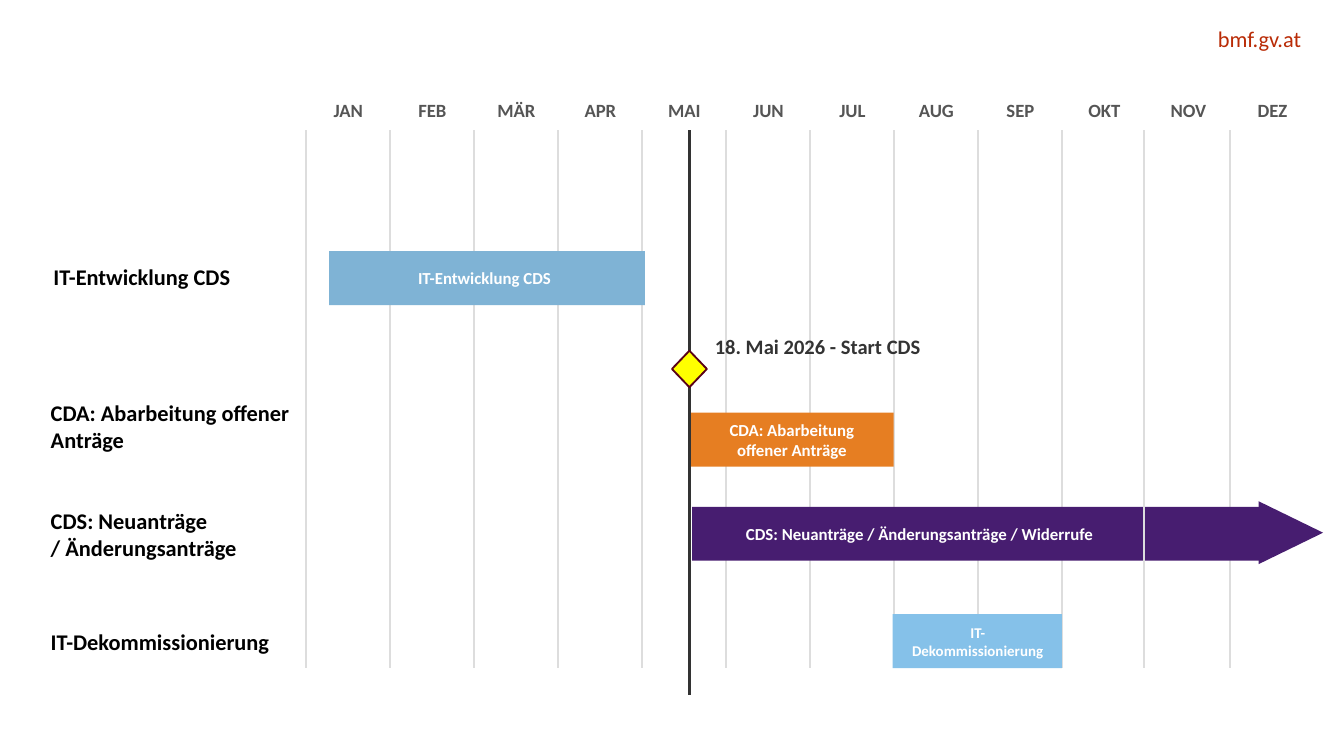
"""Build the 2026 timeline slide for the CDS start."""
from lxml import etree
from pptx import Presentation
from pptx import util as u
from pptx.dml.color import RGBColor
from pptx.enum import shapes, text as t
from pptx.oxml import ns

COLORS = {
    "accent": "B92B06", "month": "555555", "grid": "DDDDDD", "dark": "333333",
    "black": "000000", "white": "FFFFFF", "development": "7FB3D5",
    "backlog": "E67E22", "applications": "471D70", "shutdown": "85C1E9",
    "milestone": "FFFF00", "milestone_edge": "590118",
}
MONTHS = "JAN FEB MÄR APR MAI JUN JUL AUG SEP OKT NOV DEZ".split()
GRID_LEFT, GRID_TOP, GRID_HEIGHT = 5.79, 2.46, 10.16
MONTH_WIDTH = 19.05 / len(MONTHS)
START_X, NOVEMBER_X = 13.03, 21.62
BAR_HEIGHT = 1.02

presentation = Presentation()
presentation.slide_width = u.Cm(25.4)
presentation.slide_height = u.Cm(14.29)
slide = presentation.slides.add_slide(presentation.slide_layouts[6])


def add_text(text, left, top, width, height, size=12, color="black", bold=True,
             align=t.PP_ALIGN.LEFT, anchor=t.MSO_ANCHOR.MIDDLE, inset=None):
    box = slide.shapes.add_textbox(u.Cm(left), u.Cm(top), u.Cm(width), u.Cm(height))
    frame = box.text_frame
    frame.word_wrap = True
    frame.vertical_anchor = anchor
    if inset is not None:
        frame.margin_left = frame.margin_right = u.Cm(inset)
        frame.margin_top = frame.margin_bottom = u.Cm(inset)
    paragraph = frame.paragraphs[0]
    paragraph.text = text
    paragraph.alignment = align
    for run in paragraph.runs:
        run.font.name = "Calibri"
        run.font.size = u.Pt(size)
        run.font.bold = bold
        run.font.color.rgb = RGBColor.from_string(COLORS[color])


def add_line(x, height, color, weight):
    line = slide.shapes.add_connector(
        shapes.MSO_CONNECTOR.STRAIGHT,
        u.Cm(x), u.Cm(GRID_TOP), u.Cm(x), u.Cm(GRID_TOP + height))
    line.line.color.rgb = RGBColor.from_string(COLORS[color])
    line.line.width = u.Pt(weight)
    properties = line._element.find(ns.qn("p:spPr"))
    etree.SubElement(properties, ns.qn("a:effectLst"))


add_text("bmf.gv.at", 18.47, 0.48, 6.12, 0.51, color="accent", bold=False,
         align=t.PP_ALIGN.RIGHT, anchor=t.MSO_ANCHOR.TOP, inset=0)

for index, month in enumerate(MONTHS):
    x = GRID_LEFT + index * MONTH_WIDTH
    add_text(month, x, 1.7, MONTH_WIDTH, 0.76, size=10, color="month",
             align=t.PP_ALIGN.CENTER)
    if month != "NOV":
        add_line(x, GRID_HEIGHT, "grid", 1)

row_labels = [
    ("IT-Entwicklung CDS", 0.76, 4.72),
    ("CDA: Abarbeitung offener Anträge", 0.71, 7.54),
    ("CDS: Neuanträge\n/ Änderungsanträge", 0.71, 9.58),
    ("IT-Dekommissionierung", 0.71, 11.61),
]
for label, left, top in row_labels:
    add_text(label, left, top, 5.08, BAR_HEIGHT)

rectangle = shapes.MSO_SHAPE.RECTANGLE
timeline_shapes = [
    (rectangle, 6.22, 4.75, 5.97, BAR_HEIGHT, "development"),
    (rectangle, START_X, 7.8, 3.86, BAR_HEIGHT, "backlog"),
    (rectangle, 13.08, 9.58, 10.72, BAR_HEIGHT, "applications"),
    (rectangle, 16.87, 11.61, 3.2, BAR_HEIGHT, "shutdown"),
    (shapes.MSO_SHAPE.ISOSCELES_TRIANGLE, 23.8, 9.46, 1.19, 1.22, "applications"),
    (shapes.MSO_SHAPE.DIAMOND, 12.7, 6.63, 0.66, 0.69, "milestone"),
]
for kind, left, top, width, height, color in timeline_shapes:
    if color == "milestone":
        add_line(START_X, 10.67, "dark", 2)
        add_line(NOVEMBER_X, GRID_HEIGHT, "grid", 1)
    shape = slide.shapes.add_shape(kind, u.Cm(left), u.Cm(top), u.Cm(width), u.Cm(height))
    shape.shadow.inherit = False
    shape.fill.solid()
    shape.fill.fore_color.rgb = RGBColor.from_string(COLORS[color])
    if color == "milestone":
        shape.line.color.rgb = RGBColor.from_string(COLORS["milestone_edge"])
        shape.line.width = u.Pt(1)
    else:
        shape.line.fill.background()
    if kind == shapes.MSO_SHAPE.ISOSCELES_TRIANGLE:
        shape.rotation = 90

bar_labels = [
    ("IT-Entwicklung CDS", 6.17, 4.75, 5.97, 9),
    ("CDA: Abarbeitung offener Anträge", 13.06, 7.8, 3.81, 9),
    ("CDS: Neuanträge / Änderungsanträge / Widerrufe", 13.08, 9.58, 8.59, 9),
    ("IT-Dekommissionierung", 16.89, 11.61, 3.18, 8),
]
for label, left, top, width, size in bar_labels:
    add_text(label, left, top, width, BAR_HEIGHT, size=size, color="white",
             align=t.PP_ALIGN.CENTER)

add_text("18. Mai 2026 - Start CDS", 13.26, 6.17, 4.6, 0.76, size=11, color="dark")

presentation.save("out.pptx")
